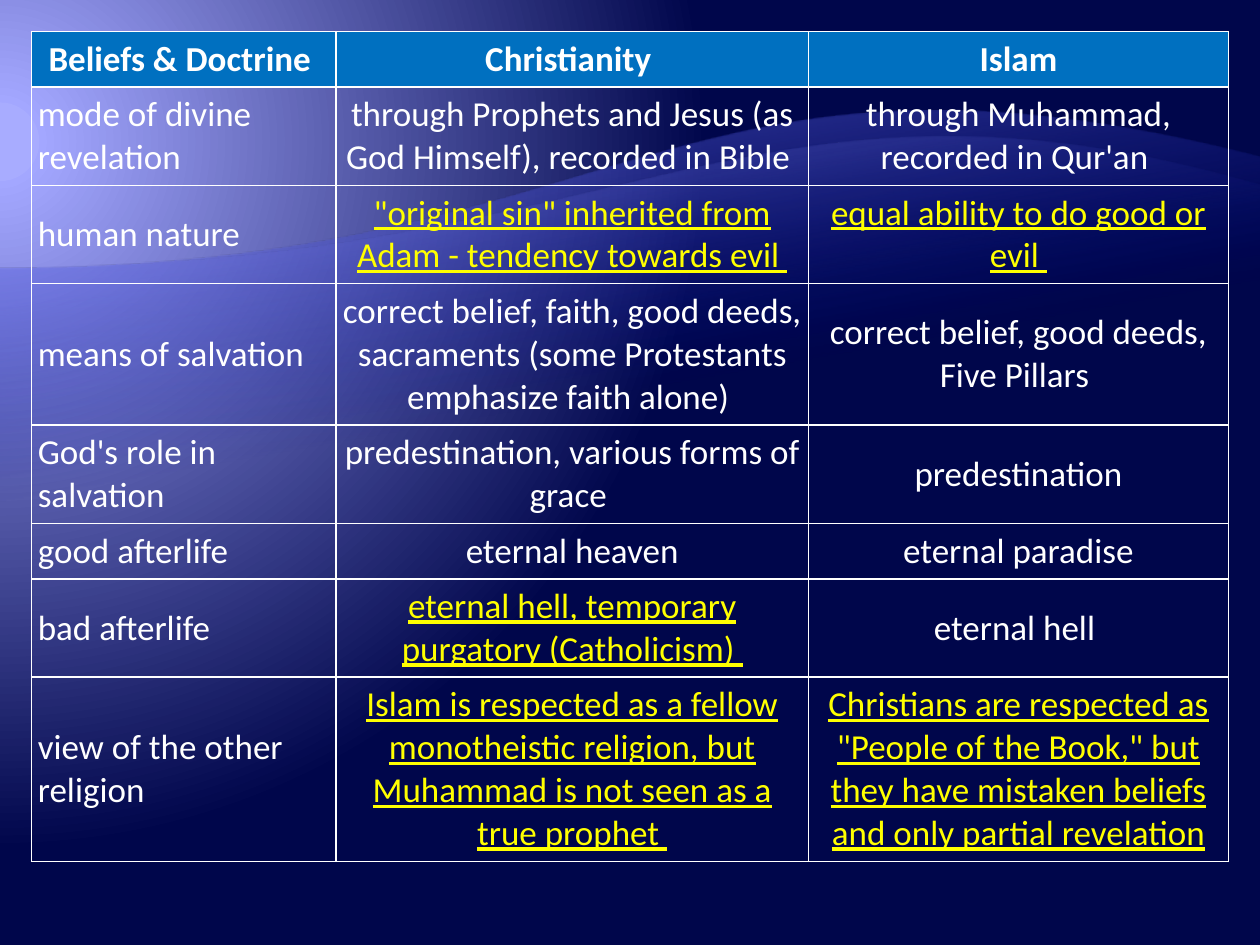
"""Build a one-slide table comparing Christian and Islamic beliefs."""
from dataclasses import dataclass

from pptx import Presentation
from pptx.dml.color import RGBColor
from pptx.enum import text
from pptx.oxml import ns, parse_xml
from pptx.util import Pt


@dataclass(frozen=True)
class Theme:
    font: str = "Calibri"
    size: float = 20
    body: str = "FFFFFF"
    highlight: str = "FFFF00"
    header: str = "0070C0"
    border: str = "FFFFFF"
    glow: tuple = ((0, "A8ACFF", 100), (5, "A3A7FF", 100), (100, "00064B", 100))
    back_wave: tuple = ((65, "000D9E", 0), (100, "797FFF", 55))
    front_wave: tuple = ((65, "000D9E", 0), (100, "A3A7FF", 30))


THEME = Theme(glow=((5, "A8ACFF", 100), (5, "A3A7FF", 100), (90, "00064B", 100)))
COLUMNS = (174, 270, 240)
ROWS = (30, 45, 45, 63, 45, 28, 45, 80)
BELIEFS = (
    ("Beliefs & Doctrine ", "Christianity ", "Islam"),
    ("mode of divine revelation",
     "through Prophets and Jesus (as God Himself), recorded in Bible ",
     "through Muhammad, recorded in Qur'an "),
    ("human nature",
     '"original sin" inherited from Adam - tendency towards evil ',
     "equal ability to do good or evil "),
    ("means of salvation",
     "correct belief, faith, good deeds, sacraments (some Protestants emphasize faith alone) ",
     "correct belief, good deeds, Five Pillars "),
    ("God's role in salvation", "predestination, various forms of grace ", "predestination"),
    ("good afterlife", "eternal heaven", "eternal paradise"),
    ("bad afterlife", "eternal hell, temporary purgatory (Catholicism) ", "eternal hell "),
    ("view of the other religion",
     "Islam is respected as a fellow monotheistic religion, but Muhammad is not seen as a true prophet ",
     'Christians are respected as "People of the Book," but they have mistaken beliefs and only partial revelation'),
)
DIFFERENCES = {(2, 1), (2, 2), (6, 1), (7, 1), (7, 2)}
GLOW_CENTRE = ('<a:path path="circle"><a:fillToRect l="20000" t="30000" '
               'r="135000" b="100000"/></a:path>')
WAVE_SLOPE = '<a:lin ang="4800000" scaled="0"/>'


def paint_gradient(fill, element, stops, direction):
    """Give the element a gradient of (position, colour, opacity) stops."""
    fill.solid()
    solid = element.find(f".//{ns.qn('a:solidFill')}")
    marks = "".join(
        f'<a:gs pos="{position * 1000}"><a:srgbClr val="{colour}">'
        f'<a:alpha val="{opacity * 1000}"/></a:srgbClr></a:gs>'
        for position, colour, opacity in stops)
    gradient = parse_xml(f'<a:gradFill {ns.nsdecls("a")} rotWithShape="1">'
                         f"<a:gsLst>{marks}</a:gsLst>{direction}</a:gradFill>")
    solid.getparent().replace(solid, gradient)


def add_wave(slide, top, height, shoulder, crest, stops):
    """Add a full-width, half-turned wave whose curved edge ends up on top."""
    width = 720
    builder = slide.shapes.build_freeform(0, 0)
    builder.add_line_segments(
        [(Pt(x), Pt(y)) for x, y in ((width, 0), (width, shoulder), (0, height))], close=True)
    wave = builder.convert_to_shape(0, Pt(top))
    edge = wave._element.findall(f".//{ns.qn('a:lnTo')}")[2]
    points = "".join(f'<a:pt x="{Pt(x)}" y="{Pt(y)}"/>'
                     for x, y in ((width / 2, shoulder), crest, (0, height)))
    curve = parse_xml(f'<a:cubicBezTo {ns.nsdecls("a")}>{points}</a:cubicBezTo>')
    edge.getparent().replace(edge, curve)
    wave.rotation = 180
    wave.shadow.inherit = False
    wave.line.fill.background()
    paint_gradient(wave.fill, wave._element, stops, WAVE_SLOPE)


def add_borders(cell):
    """Draw a one-point line on all four sides of the cell."""
    properties = cell._tc.get_or_add_tcPr()
    for index, side in enumerate("LRTB"):
        properties.insert(index, parse_xml(
            f'<a:ln{side} {ns.nsdecls("a")} w="{Pt(1)}"><a:solidFill>'
            f'<a:srgbClr val="{THEME.border}"/></a:solidFill></a:ln{side}>'))


def fill_cell(cell, wording, header, centred, different):
    """Write one belief and format its cell."""
    cell.margin_left = cell.margin_right = cell.margin_top = cell.margin_bottom = Pt(3.6)
    cell.vertical_anchor = text.MSO_ANCHOR.MIDDLE
    if header:
        cell.fill.solid()
        cell.fill.fore_color.rgb = RGBColor.from_string(THEME.header)
    else:
        cell.fill.background()
    add_borders(cell)
    belief = cell.text_frame.paragraphs[0]
    belief.text = wording
    belief.alignment = text.PP_ALIGN.CENTER if centred else text.PP_ALIGN.LEFT
    font = belief.runs[0].font
    font.name, font.size = THEME.font, Pt(THEME.size)
    font.bold, font.underline = header, different
    font.color.rgb = RGBColor.from_string(THEME.highlight if different else THEME.body)


def add_comparison(slide):
    """Add the table of beliefs."""
    frame = slide.shapes.add_table(len(ROWS), len(COLUMNS), Pt(18), Pt(18),
                                   Pt(sum(COLUMNS)), Pt(sum(ROWS)))
    table = frame.table
    table.first_row = table.horz_banding = False
    for column, width in zip(table.columns, COLUMNS):
        column.width = Pt(width)
    for row, height in zip(table.rows, ROWS):
        row.height = Pt(height)
    for r, beliefs in enumerate(BELIEFS):
        for c, wording in enumerate(beliefs):
            header = r == 0
            fill_cell(table.cell(r, c), wording, header, header or c > 0, (r, c) in DIFFERENCES)
    frame.height = Pt(492)


def main():
    """Build and save the slide."""
    deck = Presentation()
    deck.slide_width, deck.slide_height = Pt(720), Pt(540)
    slide = deck.slides.add_slide(deck.slide_layouts[6])
    paint_gradient(slide.background.fill, slide._element, THEME.glow, GLOW_CENTRE)
    add_wave(slide, 90, 438, 374.5, (335.5, 524), THEME.back_wave)
    add_wave(slide, 106, 353, 305.5, (289.5, 436.5), THEME.front_wave)
    add_comparison(slide)
    deck.save("out.pptx")


if __name__ == "__main__":
    main()
